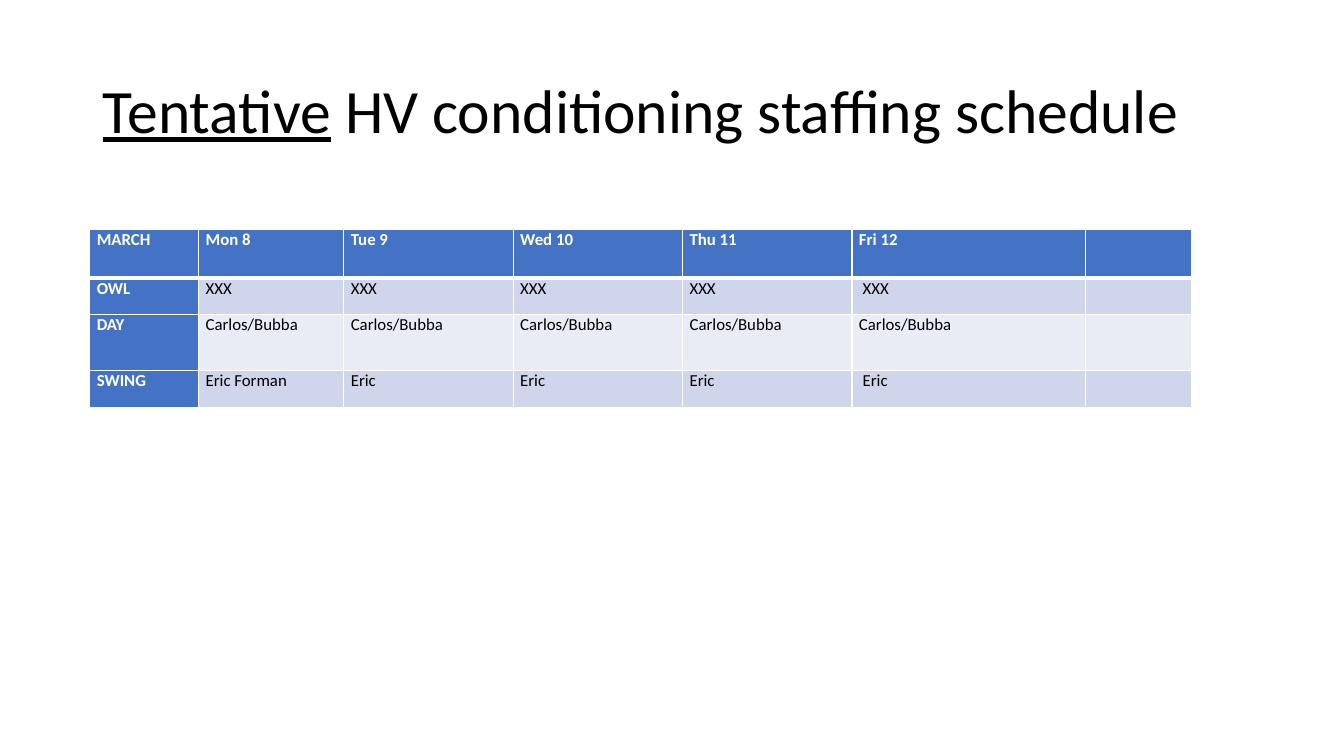
from lxml.etree import SubElement
from pptx import Presentation
from pptx.dml.color import RGBColor
from pptx.enum.text import MSO_ANCHOR, PP_ALIGN
from pptx.oxml.ns import qn
from pptx.util import Inches, Pt

# Content
TITLE = [("Tentative", True), (" HV conditioning staffing schedule", False)]
SCHEDULE = [
    ("MARCH", "Mon 8", "Tue 9", "Wed 10", "Thu 11", "Fri 12", ""),
    ("OWL", "XXX", "XXX", "XXX", "XXX", " XXX", ""),
    ("DAY",) + ("Carlos/Bubba",) * 5 + ("",),
    ("SWING", "Eric Forman", "Eric", "Eric", "Eric", " Eric", ""),
]
COL_WIDTHS = [1.08, 1.44, 1.68, 1.68, 1.68, 2.32, 1.05]
ROW_HEIGHTS = [0.48, 0.36, 0.56, 0.36]
FONT = "Calibri"
WHITE, BLACK, HEADER = "FFFFFF", "000000", "4472C4"
BANDS = ["E9EBF5", "CFD5EA"]


def rgb(value):
    return RGBColor.from_string(value)


def style_run(r, size, color, bold=False):
    r.font.name = FONT
    r.font.size = Pt(size)
    r.font.bold = bold
    r.font.color.rgb = rgb(color)


def set_borders(cell, top, bottom):
    tcPr = cell._tc.get_or_add_tcPr()
    for side, width in (("L", 1), ("R", 1), ("T", top), ("B", bottom)):
        ln = SubElement(tcPr, qn("a:ln" + side), w=str(Pt(width)))
        fill = SubElement(ln, qn("a:solidFill"))
        SubElement(fill, qn("a:srgbClr"), val=WHITE)


prs = Presentation()
prs.slide_width, prs.slide_height = Inches(13.33), Inches(7.5)
s = prs.slides.add_slide(prs.slide_layouts[5])

# Title
title = s.shapes.title
title.left, title.top = Inches(0.92), Inches(0.4)
title.width, title.height = Inches(11.5), Inches(1.45)
tf = title.text_frame
tf.word_wrap = True
tf.vertical_anchor = MSO_ANCHOR.MIDDLE
p = tf.paragraphs[0]
p.alignment = PP_ALIGN.LEFT
p.line_spacing = 0.9
for text, underlined in TITLE:
    r = p.add_run()
    r.text = text
    style_run(r, 44, BLACK)
    r.font.underline = underlined

# Schedule table
table = s.shapes.add_table(
    len(ROW_HEIGHTS), len(COL_WIDTHS), Inches(0.89), Inches(2.28),
    Inches(sum(COL_WIDTHS)), Inches(sum(ROW_HEIGHTS))).table
table.first_col = True
for column, width in zip(table.columns, COL_WIDTHS):
    column.width = Inches(width)
for row, height in zip(table.rows, ROW_HEIGHTS):
    row.height = Inches(height)

for i, entries in enumerate(SCHEDULE):
    for j, text in enumerate(entries):
        cell = table.cell(i, j)
        is_header = i == 0 or j == 0
        set_borders(cell, 3 if i == 1 else 1, 3 if i == 0 else 1)
        cell.fill.solid()
        cell.fill.fore_color.rgb = rgb(HEADER if is_header else BANDS[i % 2])
        cell.margin_left = cell.margin_right = Inches(0.07)
        cell.margin_top = cell.margin_bottom = 0
        cell.vertical_anchor = MSO_ANCHOR.TOP
        cell.text_frame.text = text
        for r in cell.text_frame.paragraphs[0].runs:
            style_run(r, 12, WHITE if is_header else BLACK, is_header)

prs.save("out.pptx")
